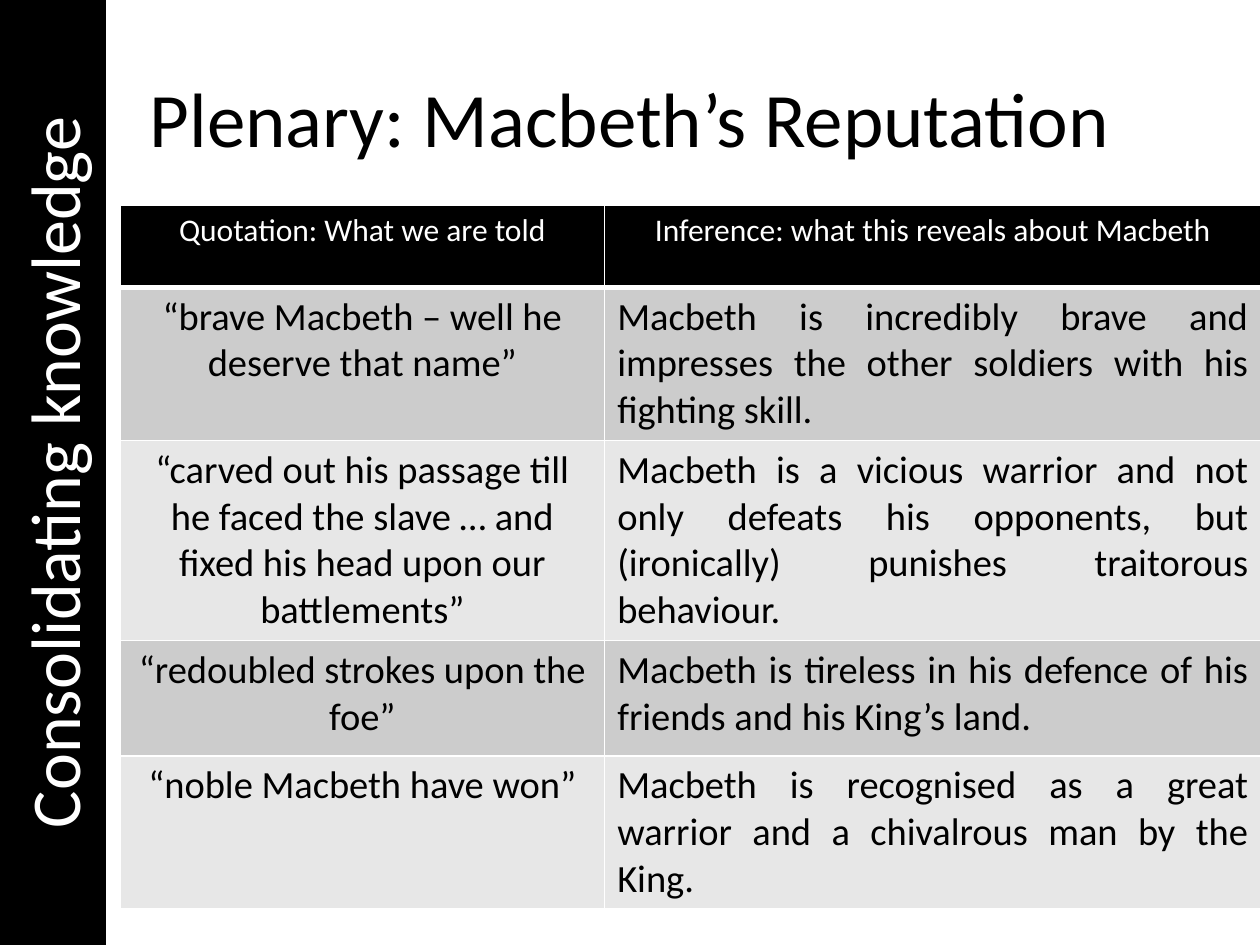
from dataclasses import dataclass

from lxml import etree
from pptx import Presentation
from pptx import util as u
from pptx.dml.color import RGBColor
from pptx.enum import shapes, text
from pptx.oxml.ns import qn

BLACK, WHITE = "000000", "FFFFFF"
BAND_FILLS = ("CCCCCC", "E7E7E7")
CENTER, JUSTIFY = text.PP_ALIGN.CENTER, text.PP_ALIGN.JUSTIFY


@dataclass
class Row:
    quotation: str
    inference: str
    height: float


HEADER = Row("Quotation: What we are told", "Inference: what this reveals about Macbeth", 1.66)
ROWS = [
    Row("“brave Macbeth – well he deserve that name”",
        "Macbeth is incredibly brave and impresses the other soldiers with his fighting skill.",
        3.08),
    Row("“carved out his passage till he faced the slave … and fixed his head upon our battlements”",
        "Macbeth is a vicious warrior and not only defeats his opponents, "
        "but (ironically) punishes traitorous behaviour.", 4.03),
    Row("“redoubled strokes upon the foe”",
        "Macbeth is tireless in his defence of his friends and his King’s land.", 2.33),
    Row("“noble Macbeth have won”",
        "Macbeth is recognised as a great warrior and a chivalrous man by the King.", 3.08),
]
COLUMN_WIDTHS = (9.77, 13.23)


def color(value: str) -> RGBColor:
    return RGBColor.from_string(value)


def write(frame, content: str, size: float, font_color: str, alignment=CENTER) -> None:
    paragraph = frame.paragraphs[0]
    paragraph.alignment = alignment
    run = paragraph.add_run()
    run.text = content
    font_format = {"name": "Calibri", "size": u.Pt(size), "bold": False}
    for name, value in font_format.items():
        setattr(run.font, name, value)
    run.font.color.rgb = color(font_color)


def add_borders(cell, bottom_width: float) -> None:
    properties = cell._tc.get_or_add_tcPr()
    widths = {"a:lnL": 1, "a:lnR": 1, "a:lnT": 1, "a:lnB": bottom_width}
    for tag, width in widths.items():
        line = etree.SubElement(properties, qn(tag), w=str(u.Pt(width)))
        fill = etree.SubElement(line, qn("a:solidFill"))
        etree.SubElement(fill, qn("a:srgbClr"), val=WHITE)


def add_title(slide) -> None:
    title = slide.shapes.title
    place = {"left": 1.27, "top": 0.76, "width": 22.86, "height": 3.18}
    for name, value in place.items():
        setattr(title, name, u.Cm(value))
    title.text_frame.vertical_anchor = text.MSO_ANCHOR.MIDDLE
    write(title.text_frame, "Plenary: Macbeth’s Reputation", 44, BLACK)


def add_quotation_table(slide) -> None:
    rows = [HEADER, *ROWS]
    table = slide.shapes.add_table(
        len(rows), len(COLUMN_WIDTHS), u.Cm(2.42), u.Cm(4.13),
        u.Cm(sum(COLUMN_WIDTHS)), u.Cm(sum(row.height for row in rows))).table
    for column, width in zip(table.columns, COLUMN_WIDTHS):
        column.width = u.Cm(width)
    for index, row in enumerate(rows):
        is_header = index == 0
        table.rows[index].height = u.Cm(row.height)
        fill = BLACK if is_header else BAND_FILLS[(index - 1) % 2]
        size, font_color = (18, WHITE) if is_header else (22, BLACK)
        alignments = (CENTER, CENTER if is_header else JUSTIFY)
        contents = (row.quotation, row.inference)
        for cell, content, alignment in zip(table.rows[index].cells, contents, alignments):
            add_borders(cell, 3 if is_header else 1)
            cell.fill.solid()
            cell.fill.fore_color.rgb = color(fill)
            write(cell.text_frame, content, size, font_color, alignment)


def add_sidebar(slide) -> None:
    sidebar = slide.shapes.add_shape(
        shapes.MSO_SHAPE.RECTANGLE, 0, 0, u.Cm(2.11), u.Cm(19.05))
    sidebar.shadow.inherit = False
    sidebar.fill.solid()
    sidebar.fill.fore_color.rgb = color(BLACK)
    sidebar.line.color.rgb = color(BLACK)
    sidebar.line.width = u.Pt(2)
    frame = sidebar.text_frame
    frame.vertical_anchor = text.MSO_ANCHOR.MIDDLE
    frame._txBody.bodyPr.set("vert", "vert270")
    write(frame, "Consolidating knowledge", 40, WHITE)


def main() -> None:
    presentation = Presentation()
    presentation.slide_width, presentation.slide_height = u.Cm(25.4), u.Cm(19.05)
    slide = presentation.slides.add_slide(presentation.slide_layouts[5])
    add_title(slide)
    add_quotation_table(slide)
    add_sidebar(slide)
    presentation.save("out.pptx")


if __name__ == "__main__":
    main()
